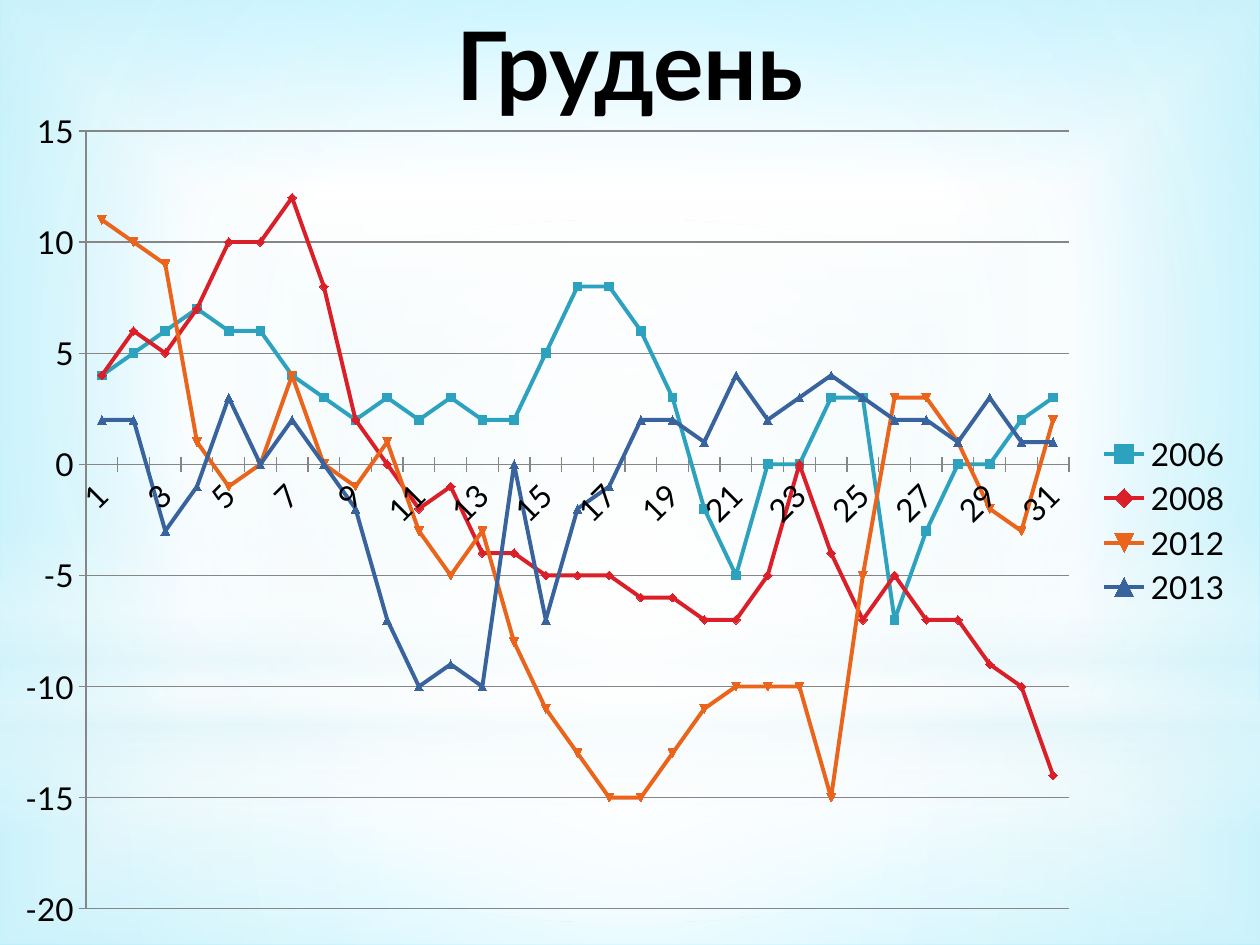
from pptx import Presentation
from pptx.chart.data import CategoryChartData as Data
from pptx.dml.color import RGBColor as RGB
from pptx.enum.chart import XL_CHART_TYPE as Kind, XL_LEGEND_POSITION as Side, XL_TICK_MARK as Tick
from pptx.enum.shapes import MSO_SHAPE as Form
from pptx.enum.text import MSO_ANCHOR as Anchor, PP_ALIGN as Align
from pptx.oxml import parse_xml
from pptx.oxml.ns import nsdecls, qn
from pptx.util import Pt

PX = 914400 // 126
WIDE, HIGH = 1260, 945
FONT = "Lato"
BLACK, WHITE = RGB(0, 0, 0), RGB(255, 255, 255)
GREY = RGB(0x86, 0x86, 0x86)
PALE, MIST, SKY = RGB(0xCD, 0xEF, 0xF7), RGB(0xDE, 0xF5, 0xFA), RGB(0x7C, 0xE7, 0xFF)
TEAL, RED = RGB(0x2D, 0xA2, 0xBF), RGB(0xDA, 0x1F, 0x28)
ORANGE, BLUE = RGB(0xEB, 0x64, 0x1B), RGB(0x39, 0x63, 0x9D)

# Content: daily temperatures by year
TITLE = "Грудень"
DAYS = [str(day) for day in range(1, 32)]
YEARS = [
    ("2006", TEAL, [4, 5, 6, 7, 6, 6, 4, 3, 2, 3, 2, 3, 2, 2, 5, 8, 8, 6, 3, -2, -5,
                    0, 0, 3, 3, -7, -3, 0, 0, 2, 3]),
    ("2008", RED, [4, 6, 5, 7, 10, 10, 12, 8, 2, 0, -2, -1, -4, -4, -5, -5, -5, -6, -6,
                   -7, -7, -5, 0, -4, -7, -5, -7, -7, -9, -10, -14]),
    ("2012", ORANGE, [11, 10, 9, 1, -1, 0, 4, 0, -1, 1, -3, -5, -3, -8, -11, -13, -15,
                      -15, -13, -11, -10, -10, -10, -15, -5, 3, 3, 1, -2, -3, 2]),
    ("2013", BLUE, [2, 2, -3, -1, 3, 0, 2, 0, -2, -7, -10, -9, -10, 0, -7, -2, -1, 2, 2,
                    1, 4, 2, 3, 4, 3, 2, 2, 1, 3, 1, 1]),
]

# Backdrop: gradient stops are (position %, colour, opacity %)
BACK = [(0, PALE, 45), (60, WHITE, 100), (100, SKY, 100)]
GLOWS = [
    (Form.RECTANGLE, 703, 242, "circle", [(0, WHITE, 91), (37, WHITE, 76), (100, MIST, 79)]),
    (Form.RECTANGLE, 0, 703, "circle", [(0, WHITE, 89), (48, WHITE, 62), (100, MIST, 79)]),
    (Form.RECTANGLE, 519, 315, None, [(0, WHITE, 0), (29, WHITE, 30), (45, MIST, 40),
                                      (55, WHITE, 26), (65, MIST, 60), (100, WHITE, 0)]),
    (Form.OVAL, 220, 703, "circle", [(0, WHITE, 100), (56, WHITE, 0)]),
]

# Chart frame and its plot area: left, top, width, height
FRAME = (0, 96, 1245, 849)
PLOT = (86, 131, 983, 778)


def box(*sides):
    return [side * PX for side in sides]


def blend(fill, node, stops, kind):
    """Swap the solid fill under node for a gradient; kind None runs downwards."""
    fill.solid()
    marks = "".join(
        f'<a:gs pos="{pos * 1000}"><a:srgbClr val="{hue}">'
        f'<a:alpha val="{alpha * 1000}"/></a:srgbClr></a:gs>'
        for pos, hue, alpha in stops)
    way = '<a:lin ang="5400000" scaled="0"/>'
    if kind:
        way = (f'<a:path path="{kind}"><a:fillToRect l="50000" t="50000" '
               'r="50000" b="50000"/></a:path>')
    old = node.find(".//" + qn("a:solidFill"))
    old.getparent().replace(old, parse_xml(
        f'<a:gradFill {nsdecls("a")} rotWithShape="1"><a:gsLst>{marks}</a:gsLst>{way}</a:gradFill>'))


def style(font, size=18, hue=BLACK, bold=False):
    font.name, font.size, font.bold = FONT, Pt(size), bold
    font.color.rgb = hue


def write(slide, text, area, align=Align.CENTER, **look):
    frame = slide.shapes.add_textbox(*box(*area)).text_frame
    frame.word_wrap = True
    frame.vertical_anchor = Anchor.TOP
    line = frame.paragraphs[0]
    line.alignment = align
    run = line.add_run()
    run.text = text
    style(run.font, **look)


def draw(slide):
    data = Data()
    data.categories = DAYS
    for name, _, vals in YEARS:
        data.add_series(name, vals)
    chart = slide.shapes.add_chart(Kind.LINE_MARKERS, *box(*FRAME), data).chart
    style(chart.font)
    chart.has_title = False
    chart.has_legend = True
    chart.legend.position = Side.RIGHT
    chart.legend.include_in_layout = False
    plot = chart.plots[0]
    plot.vary_by_categories = False

    # Series keep automatic marker symbols
    for row, (_, hue, _) in zip(plot.series, YEARS):
        row.smooth = False
        row.format.line.width = Pt(2.25)
        row.format.line.color.rgb = hue
        row.marker.size = 5
        row.marker.format.fill.solid()
        row.marker.format.fill.fore_color.rgb = hue
        row.marker.format.line.color.rgb = hue

    # Axes
    days, temps = chart.category_axis, chart.value_axis
    for axis in (days, temps):
        axis.major_tick_mark = Tick.CROSS
        axis.minor_tick_mark = Tick.NONE
        axis.format.line.color.rgb = GREY
        style(axis.tick_labels.font)
    days.has_major_gridlines = False
    days._element.find(".//" + qn("a:bodyPr")).set("rot", "-2700000")
    temps.minimum_scale, temps.maximum_scale, temps.major_unit = -20, 15, 5
    temps.has_major_gridlines = True
    temps.major_gridlines.format.line.color.rgb = GREY

    # Fixed inner plot area, as shares of the frame
    left, top, wide, high = FRAME
    shares = zip("xywh", ((PLOT[0] - left) / wide, (PLOT[1] - top) / high,
                          PLOT[2] / wide, PLOT[3] / high))
    parts = "".join(f'<c:{key} val="{part:.4f}"/>' for key, part in shares)
    area = chart._chartSpace.find(".//" + qn("c:plotArea"))
    old = area.find(qn("c:layout"))
    if old is not None:
        area.remove(old)
    area.insert(0, parse_xml(
        f'<c:layout {nsdecls("c")}><c:manualLayout><c:layoutTarget val="inner"/>'
        f'<c:xMode val="edge"/><c:yMode val="edge"/>{parts}</c:manualLayout></c:layout>'))


def main():
    deck = Presentation()
    deck.slide_width, deck.slide_height = box(WIDE, HIGH)
    slide = deck.slides.add_slide(deck.slide_layouts[6])
    blend(slide.background.fill, slide._element, BACK, "shape")
    for form, top, high, kind, stops in GLOWS:
        glow = slide.shapes.add_shape(form, *box(0, top, WIDE, high))
        glow.shadow.inherit = False
        glow.line.fill.background()
        blend(glow.fill, glow._element, stops, kind)
    write(slide, TITLE, (0, 0, WIDE, 86), size=54, bold=True)
    draw(slide)
    deck.save("out.pptx")


if __name__ == "__main__":
    main()
